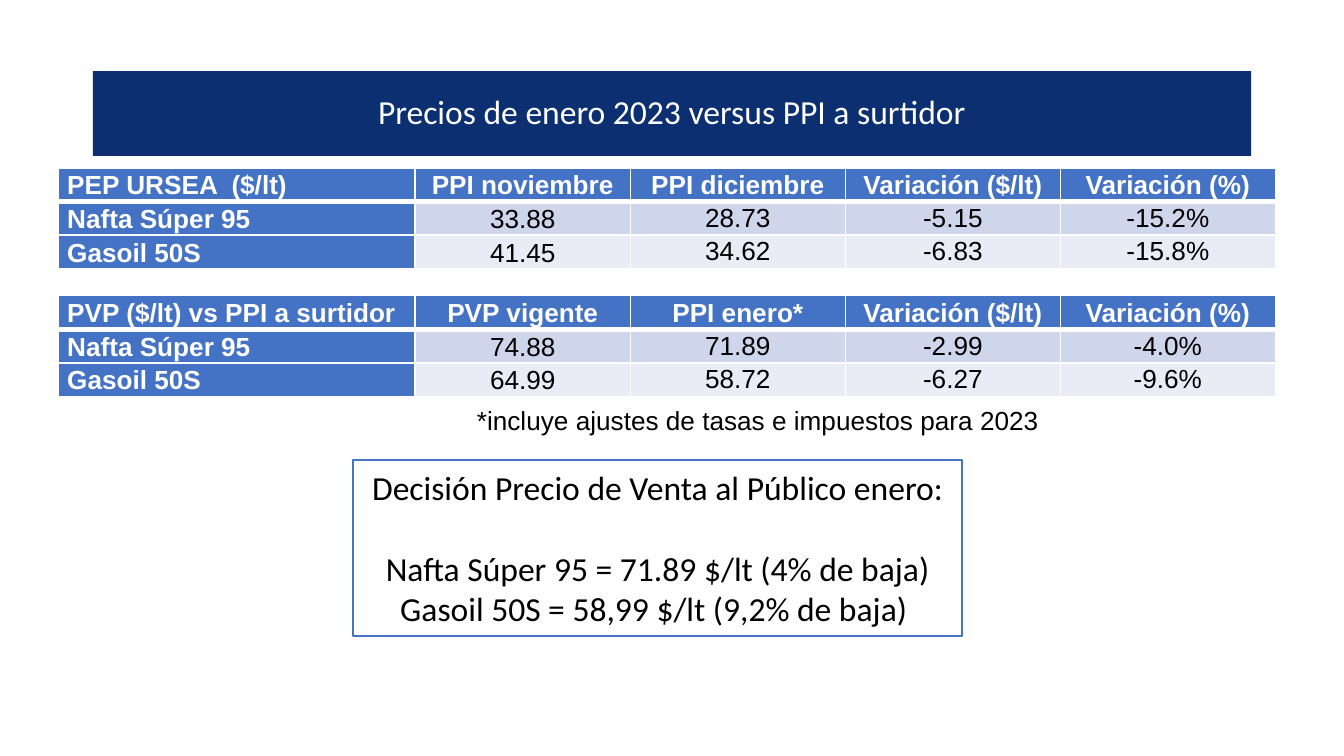
from dataclasses import dataclass

from lxml import etree
from pptx import Presentation
from pptx.dml.color import RGBColor
from pptx.enum.shapes import MSO_SHAPE
from pptx.enum.text import MSO_ANCHOR, PP_ALIGN
from pptx.oxml.ns import qn
from pptx.util import Inches, Pt

RECT = MSO_SHAPE.RECTANGLE
TOP, MIDDLE = MSO_ANCHOR.TOP, MSO_ANCHOR.MIDDLE
LEFT, CENTER = PP_ALIGN.LEFT, PP_ALIGN.CENTER


@dataclass(frozen=True)
class Theme:
    navy: str = "0C2F71"
    blue: str = "4472C4"
    bands: tuple = ("CFD5EA", "E9EBF5")
    white: str = "FFFFFF"
    black: str = "000000"
    head: str = "Calibri"
    body: str = "Arial"
    large: int = 18
    small: int = 14


THEME = Theme()


def color(code):
    return RGBColor.from_string(code)


def write(frame, *lines, font=THEME.body, size=THEME.small, ink=THEME.black,
          bold=False, align=LEFT, spacing=None, gap=0):
    """Write one paragraph per line; gap is the space after the first."""
    for i, line in enumerate(lines):
        para = frame.add_paragraph() if i else frame.paragraphs[0]
        para.alignment = align
        if spacing:
            para.line_spacing = spacing
        if gap and i == 0:
            para.space_after = Pt(gap)
        run = para.add_run()
        run.text = line
        run.font.name, run.font.size, run.font.bold = font, Pt(size), bold
        run.font.color.rgb = color(ink)


def add_box(slide, box, fill, line=None):
    shape = slide.shapes.add_shape(RECT, *map(Inches, box))
    shape.shadow.inherit = False
    shape.fill.solid()
    shape.fill.fore_color.rgb = color(fill)
    if line:
        shape.line.color.rgb = color(line)
        shape.line.width = Pt(1)
    else:
        shape.line.fill.background()
    shape.text_frame.vertical_anchor = MIDDLE
    return shape.text_frame


def add_title(slide, box, text):
    frame = add_box(slide, box, THEME.navy)
    frame.word_wrap = True
    write(frame, text, font=THEME.head, size=THEME.large, ink=THEME.white,
          align=CENTER, spacing=0.9)


def edge(cell, base):
    """Draw white cell borders, with the bottom one of the given width."""
    props = cell._tc.get_or_add_tcPr()
    for i, side in enumerate("LRTB"):
        width = base if side == "B" else 1
        line = etree.Element(qn(f"a:ln{side}"), w=str(Pt(width)))
        fill = etree.SubElement(line, qn("a:solidFill"))
        etree.SubElement(fill, qn("a:srgbClr"), val=THEME.white)
        props.insert(i, line)


def add_prices(slide, box, rows):
    count = len(rows[0])
    table = slide.shapes.add_table(len(rows), count, *map(Inches, box)).table
    first = 2.66
    for c, col in enumerate(table.columns):
        col.width = Inches((box[2] - first) / (count - 1) if c else first)
    for r, row in enumerate(rows):
        table.rows[r].height = Inches(box[3] / len(rows))
        for c, text in enumerate(row):
            cell = table.cell(r, c)
            head = r == 0 or c == 0
            cell.margin_left = cell.margin_right = Inches(0.07)
            cell.margin_top = cell.margin_bottom = 0
            cell.vertical_anchor = MIDDLE if r == 0 or c < 2 else TOP
            cell.fill.solid()
            cell.fill.fore_color.rgb = color(
                THEME.blue if head else THEME.bands[(r - 1) % 2])
            edge(cell, 1 if r else 3)
            write(cell.text_frame, text, bold=head,
                  ink=THEME.white if head else THEME.black,
                  align=CENTER if c else LEFT, spacing=1.07)


def add_note(slide, box, text):
    frame = slide.shapes.add_textbox(*map(Inches, box)).text_frame
    frame.word_wrap = False
    write(frame, text)


def add_result(slide, box, lines):
    frame = add_box(slide, box, THEME.white, THEME.blue)
    frame.word_wrap = False
    write(frame, *lines, font=THEME.head, size=THEME.large, align=CENTER,
          gap=22)


def main():
    deck = Presentation()
    deck.slide_width = Inches(10)
    deck.slide_height = deck.slide_width * 9 // 16
    slide = deck.slides.add_slide(deck.slide_layouts[6])

    # Heading
    add_title(slide, (0.69, 0.53, 8.62, 0.63),
              "Precios de enero 2023 versus PPI a surtidor")

    # Price tables
    change = ("Variación ($/lt)", "Variación (%)")
    add_prices(slide, (0.43, 1.25, 9.06, 0.75), [
        ("PEP URSEA  ($/lt)", "PPI noviembre", "PPI diciembre", *change),
        ("Nafta Súper 95", "33.88", "28.73", "-5.15", "-15.2%"),
        ("Gasoil 50S", "41.45", "34.62", "-6.83", "-15.8%"),
    ])
    add_prices(slide, (0.43, 2.2, 9.06, 0.75), [
        ("PVP ($/lt) vs PPI a surtidor", "PVP vigente", "PPI enero*", *change),
        ("Nafta Súper 95", "74.88", "71.89", "-2.99", "-4.0%"),
        ("Gasoil 50S", "64.99", "58.72", "-6.27", "-9.6%"),
    ])

    # Decision and footnote
    add_result(slide, (2.63, 3.42, 4.53, 1.31), [
        "Decisión Precio de Venta al Público enero:",
        "Nafta Súper 95 = 71.89 $/lt (4% de baja)",
        "Gasoil 50S = 58,99 $/lt (9,2% de baja) ",
    ])
    add_note(slide, (3.45, 2.96, 4.4, 0.34),
             "*incluye ajustes de tasas e impuestos para 2023")

    deck.save("out.pptx")


if __name__ == "__main__":
    main()
